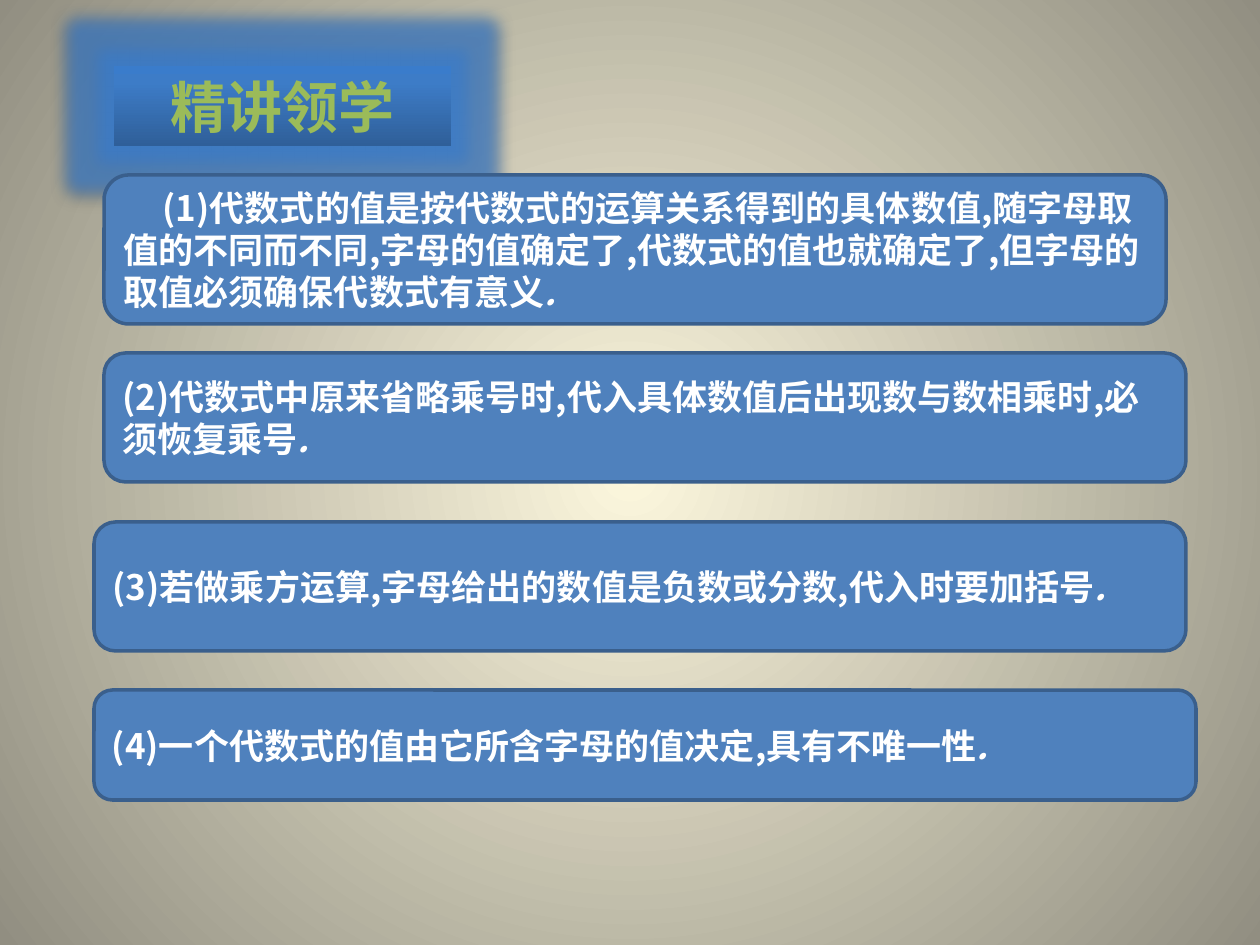
"""Build a slide with a glowing title bar and four rounded rule boxes."""
from lxml.etree import SubElement, fromstring
from pptx import Presentation
from pptx.dml.color import RGBColor
from pptx.enum.shapes import MSO_SHAPE
from pptx.enum.text import MSO_ANCHOR, MSO_AUTO_SIZE, PP_ALIGN
from pptx.oxml.ns import nsdecls, qn
from pptx.util import Pt

PX = 914400 / 126
FONT = "Noto Sans CJK SC"
rgb = RGBColor.from_string


def set_gradient(props, stops, shade):
    """Replace the solid fill in props with a gradient."""
    gs = "".join(f'<a:gs pos="{pos * 1000}"><a:srgbClr val="{c}"/></a:gs>' for pos, c in stops)
    grad = fromstring(f'<a:gradFill {nsdecls("a")} rotWithShape="1"><a:gsLst>{gs}</a:gsLst>{shade}</a:gradFill>')
    props.replace(props.find(qn("a:solidFill")), grad)


def add_box(s, kind, box, fill, runs, color, size):
    """Add a filled shape with bold text runs, each given as text and italic."""
    sp = s.shapes.add_shape(kind, *(round(v * PX) for v in box))
    sp.shadow.inherit = False
    sp.fill.solid()
    sp.fill.fore_color.rgb = rgb(fill)
    tf = sp.text_frame
    tf.word_wrap = True
    tf.vertical_anchor = MSO_ANCHOR.MIDDLE
    p = tf.paragraphs[0]
    p.alignment = PP_ALIGN.LEFT
    for text, italic in runs:
        r = p.add_run()
        r.text = text
        look = {"name": FONT, "size": Pt(size), "bold": True, "italic": italic}
        for key, value in look.items():
            setattr(r.font, key, value)
        r.font.color.rgb = rgb(color)
        SubElement(r._r.get_or_add_rPr(), qn("a:ea"), typeface=FONT)
    return sp


prs = Presentation()
prs.slide_width, prs.slide_height = round(1260 * PX), round(945 * PX)
s = prs.slides.add_slide(prs.slide_layouts[6])
s.background.fill.solid()
set_gradient(
    s._element.xpath(".//p:bgPr")[0],
    [(0, "FCF7DD"), (100, "918E81")],
    '<a:path path="circle"><a:fillToRect l="50000" t="50000" r="50000" b="50000"/></a:path>',
)

sp = add_box(s, MSO_SHAPE.RECTANGLE, (114, 66, 337, 80), "3D7CC7", [("精讲领学", False)], "9BBB59", 32)
sp.line.fill.background()
sp.text_frame.auto_size = MSO_AUTO_SIZE.SHAPE_TO_FIT_TEXT
sp.text_frame.vertical_anchor = MSO_ANCHOR.TOP
p = sp.text_frame.paragraphs[0]
p.alignment = PP_ALIGN.CENTER
p.runs[0]._r.get_or_add_rPr().insert(0, fromstring(
    f'<a:ln {nsdecls("a")} w="19050"><a:solidFill><a:srgbClr val="FEFEFE"/></a:solidFill></a:ln>'))
props = sp._element.spPr
set_gradient(
    props,
    [(0, "2F5F99"), (80, "3D7CC7"), (100, "3A7CCB")],
    '<a:lin ang="16200000" scaled="0"/>',
)
effects = [
    ("glow", 'rad="228600"', "3A7CCB", 70),
    ("outerShdw", 'blurRad="39370" dist="22860" dir="5400000" rotWithShape="0"', "000000", 35),
]
for tag, attrs, color, alpha in effects:
    props.find(qn("a:effectLst")).append(fromstring(
        f'<a:{tag} {nsdecls("a")} {attrs}><a:srgbClr val="{color}">'
        f'<a:alpha val="{alpha * 1000}"/></a:srgbClr></a:{tag}>'))

rules = [
    ((104, 175, 1062, 149), 39,
     "(1)代数式的值是按代数式的运算关系得到的具体数值,随字母取值的不同而不同,"
     "字母的值确定了,代数式的值也就确定了,但字母的取值必须确保代数式有意义"),
    ((104, 353, 1082, 129), 0, "(2)代数式中原来省略乘号时,代入具体数值后出现数与数相乘时,必须恢复乘号"),
    ((94, 522, 1092, 129), 0, "(3)若做乘方运算,字母给出的数值是负数或分数,代入时要加括号"),
    ((94, 690, 1102, 110), 0, "(4)一个代数式的值由它所含字母的值决定,具有不唯一性"),
]
for box, indent, text in rules:
    runs = [(text, False), (".", True)]
    sp = add_box(s, MSO_SHAPE.ROUNDED_RECTANGLE, box, "4F81BD", runs, "FFFFFF", 20)
    sp.line.color.rgb = rgb("3A5F8C")
    sp.line.width = Pt(2)
    sp.text_frame.paragraphs[0]._p.get_or_add_pPr().set("indent", str(round(indent * PX)))

prs.save("out.pptx")
